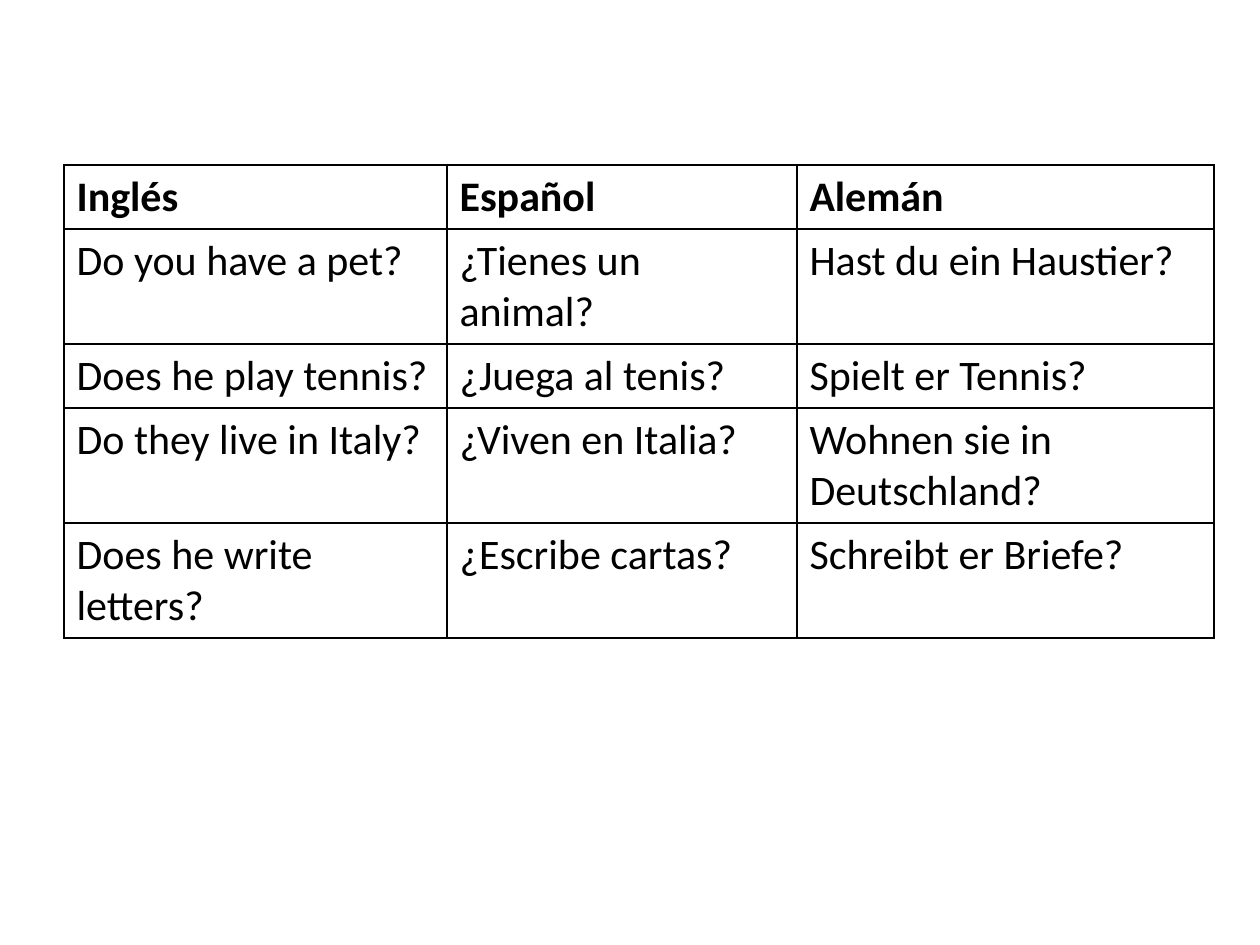
from pptx import Presentation
from pptx.dml.color import RGBColor
from pptx.oxml import parse_xml
from pptx.oxml.ns import nsdecls
from pptx.util import Pt

PX = 914400 // 126
COLORS = {"text": "000000", "border": "000000"}
COL_WIDTHS = [383, 350, 417]
ROW_HEIGHT = 52
ROWS = [
    ("Inglés", "Español", "Alemán"),
    ("Do you have a pet?", "¿Tienes un animal?", "Hast du ein Haustier?"),
    ("Does he play tennis?", "¿Juega al tenis?", "Spielt er Tennis?"),
    ("Do they live in Italy?", "¿Viven en Italia?", "Wohnen sie in Deutschland?"),
    ("Does he write letters?", "¿Escribe cartas?", "Schreibt er Briefe?"),
]


def add_text(tf, text, size=24, bold=False, color="text", font="Calibri"):
    r = tf.paragraphs[0].add_run()
    r.text = text
    r.font.name = font
    r.font.size = Pt(size)
    r.font.bold = bold
    r.font.color.rgb = RGBColor.from_string(COLORS[color])


def add_borders(cell, color="border", width=1):
    tcPr = cell._tc.get_or_add_tcPr()
    for i, side in enumerate(("lnL", "lnR", "lnT", "lnB")):
        tcPr.insert(i, parse_xml(
            f'<a:{side} {nsdecls("a")} w="{Pt(width)}"><a:solidFill>'
            f'<a:srgbClr val="{COLORS[color]}"/></a:solidFill></a:{side}>'))


prs = Presentation()
prs.slide_width, prs.slide_height = 1260 * PX, 945 * PX
s = prs.slides.add_slide(prs.slide_layouts[6])

frame = s.shapes.add_table(
    len(ROWS), len(COL_WIDTHS), 64 * PX, 165 * PX,
    sum(COL_WIDTHS) * PX, len(ROWS) * ROW_HEIGHT * PX)
table = frame.table
table.first_row = table.horz_banding = False

for col, width in zip(table.columns, COL_WIDTHS):
    col.width = width * PX

for i, (row, texts) in enumerate(zip(table.rows, ROWS)):
    row.height = ROW_HEIGHT * PX
    for cell, text in zip(row.cells, texts):
        cell.fill.background()
        add_borders(cell)
        add_text(cell.text_frame, text, bold=i == 0)

prs.save("out.pptx")
